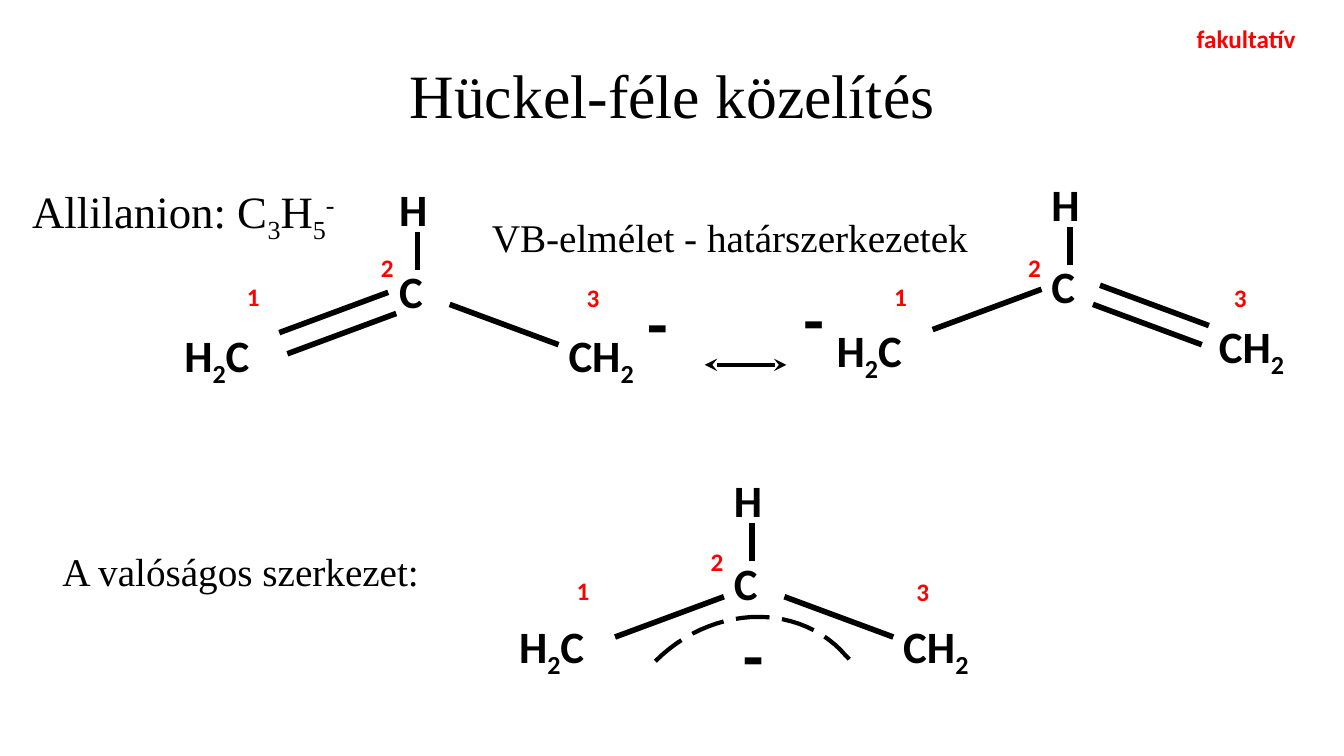
"""Build the slide on the Hückel approximation of the allyl anion."""
from pptx import Presentation
from pptx.dml.color import RGBColor
from pptx.enum.dml import MSO_LINE_DASH_STYLE as Dash
from pptx.enum.shapes import MSO_CONNECTOR as Connector
from pptx.enum.text import MSO_ANCHOR as Anchor, MSO_AUTO_SIZE as AutoSize, PP_ALIGN as Align
from pptx.oxml.ns import qn
from pptx.util import Inches, Pt
from lxml.etree import SubElement

BLACK, RED = "000000", "FF0000"
SERIF, SANS = "Times New Roman", "Calibri"
SUB, SUPER = -25, 30

TITLE = "Hückel-féle közelítés"
CAPTIONS = [
    ([("Allilanion: C", 0), ("3", SUB), ("H", 0), ("5", SUB), ("-", SUPER)],
     (0.22, 1.77, 3.33, 0.64), 32, SERIF, BLACK),
    ([("VB-elmélet - határszerkezetek", 0)], (4.78, 2.07, 4.97, 0.57), 28, SERIF, BLACK),
    ([("A valóságos szerkezet:", 0)], (0.52, 5.38, 3.76, 0.57), 28, SERIF, BLACK),
    ([("fakultatív", 0)], (11.77, 0.18, 1.19, 0.4), 18, SANS, RED),
]

ATOMS = [
    ([("H", 0), ("2", SUB), ("C", 0)], (0, 0, 0.88)),
    ([("H", 0)], (2.13, -1.45, 0.49)),
    ([("C", 0)], (2.13, -0.63, 0.44)),
]
CH2 = [("CH", 0), ("2", SUB)]
NUMBERS = {"1": (0, 0), "2": (1.33, -0.29), "3": (3.37, 0.01)}
BOND_RUN, BOND_RISE = 1.08, 0.4

MOLECULES = [
    {"origin": (1.73, 3.2), "ch2": (5.54, 3.2), "number_1": (2.35, 2.74), "charge": (6.32, 2.74),
     "left_bonds": [(2.77, 3.3), (2.85, 3.51)], "right_bonds": [(5.54, 3.42)]},
    {"origin": (8.2, 3.15), "ch2": (11.99, 3.11), "number_1": (8.77, 2.74), "charge": (7.87, 2.7),
     "left_bonds": [(9.25, 3.27)], "right_bonds": [(11.99, 3.23), (11.92, 3.42)]},
    {"origin": (5.05, 6.09), "ch2": (8.86, 6.09), "number_1": (5.62, 5.66), "charge": (7.27, 6.04),
     "left_bonds": [(6.1, 6.32)], "right_bonds": [(8.86, 6.32)]},
]
RESONANCE_ARROW = ((6.99, 3.62), (7.8, 3.62))
DELOCALISED_ARC = [
    ((6.5, 6.56), (7.04, 6.02), (7.86, 5.97), (8.34, 6.45)),
    ((8.34, 6.45), (8.37, 6.49), (8.41, 6.52), (8.44, 6.56)),
]


def color(hex_string):
    return RGBColor.from_string(hex_string)


def style(run, size, font, hex_string, bold=False):
    run.font.size, run.font.name, run.font.bold = Pt(size), font, bold
    run.font.color.rgb = color(hex_string)


def add_text(shapes, parts, box, size, font=SANS, hex_string=BLACK):
    frame = shapes.add_textbox(*map(Inches, box)).text_frame
    frame.word_wrap = False
    frame.auto_size = AutoSize.SHAPE_TO_FIT_TEXT
    for text, baseline in parts:
        run = frame.paragraphs[0].add_run()
        run.text = text
        style(run, size, font, hex_string, bold=font == SANS)
        if baseline:
            run.font._element.set("baseline", str(baseline * 1000))


def add_line(shapes, start, end, width=4):
    line = shapes.add_connector(Connector.STRAIGHT, *map(Inches, (*start, *end)))
    line.line.color.rgb = color(BLACK)
    line.line.width = Pt(width)
    SubElement(line._element.spPr, qn("a:effectLst"))
    return line


def add_molecule(slide, molecule):
    shapes = slide.shapes.add_group_shape().shapes
    left, top = molecule["origin"]
    for parts, (dx, dy, width) in ATOMS:
        add_text(shapes, parts, (left + dx, top + dy, width, 0.64), 32)
    add_text(shapes, CH2, (*molecule["ch2"], 0.88, 0.64), 32)
    add_text(shapes, [("-", 0)], (*molecule["charge"], 0.42, 0.9), 48)
    number_left, number_top = molecule["number_1"]
    for number, (dx, dy) in NUMBERS.items():
        box = (number_left + dx, number_top + dy, 0.33, 0.4)
        add_text(shapes, [(number, 0)], box, 18, hex_string=RED)
    for side, run in (("left_bonds", BOND_RUN), ("right_bonds", -BOND_RUN)):
        for x, y in molecule[side]:
            add_line(shapes, (x, y), (x + run, y - BOND_RISE))
    add_line(shapes, (left + 2.41, top - 0.9), (left + 2.41, top - 0.52))
    return shapes


def curve_point(curve, t):
    weights = ((1 - t) ** 3, 3 * t * (1 - t) ** 2, 3 * t ** 2 * (1 - t), t ** 3)
    return tuple(Inches(sum(w * p[axis] for w, p in zip(weights, curve))) for axis in (0, 1))


def add_arc(shapes, curves, steps=24):
    points = [curve_point(curve, i / steps) for curve in curves for i in range(steps + 1)]
    builder = shapes.build_freeform(*points[0])
    builder.add_line_segments(points[1:], close=False)
    arc = builder.convert_to_shape()
    arc.shadow.inherit = False
    arc.fill.background()
    arc.line.color.rgb = color(BLACK)
    arc.line.width = Pt(3)
    arc.line.dash_style = Dash.LONG_DASH


def main():
    deck = Presentation()
    deck.slide_width, deck.slide_height = Inches(13.33), Inches(7.5)
    slide = deck.slides.add_slide(deck.slide_layouts[5])

    title = slide.shapes.title
    title.left, title.top, title.width, title.height = map(Inches, (0.92, 0.25, 11.5, 1.45))
    title.text_frame.text = TITLE
    title.text_frame.vertical_anchor = Anchor.MIDDLE
    heading = title.text_frame.paragraphs[0]
    heading.alignment, heading.line_spacing = Align.CENTER, 0.9
    style(heading.runs[0], 44, SERIF, BLACK)

    molecules = [add_molecule(slide, molecule) for molecule in MOLECULES]
    add_arc(molecules[-1], DELOCALISED_ARC)

    arrow = add_line(slide.shapes, *RESONANCE_ARROW, width=3)
    outline = arrow.line._get_or_add_ln()
    for end in ("a:headEnd", "a:tailEnd"):
        SubElement(outline, qn(end), type="stealth")

    for caption in CAPTIONS:
        add_text(slide.shapes, *caption)
    deck.save("out.pptx")


if __name__ == "__main__":
    main()
